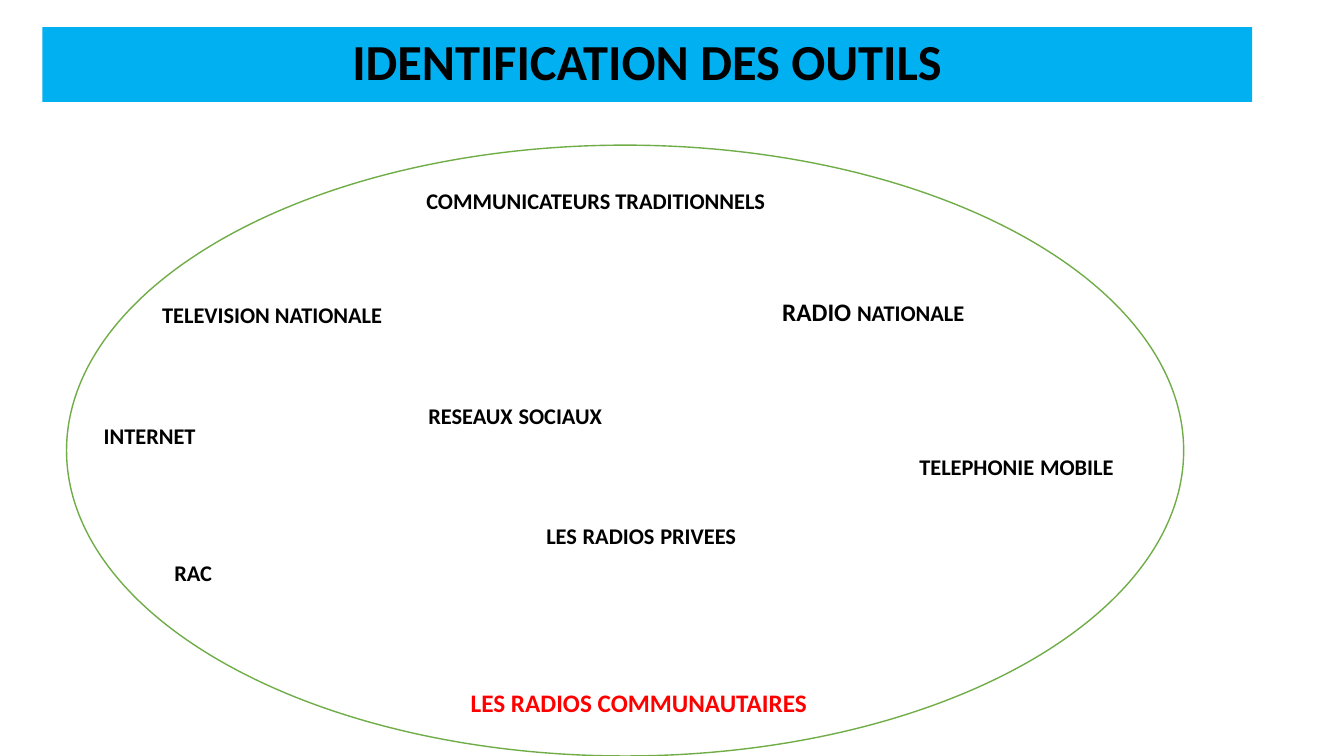
from pptx import Presentation
from pptx.dml.color import RGBColor
from pptx.enum.shapes import MSO_SHAPE
from pptx.enum.text import MSO_ANCHOR, MSO_AUTO_SIZE, PP_ALIGN
from pptx.util import Inches, Pt

BLACK = RGBColor(0x00, 0x00, 0x00)
WHITE = RGBColor(0xFF, 0xFF, 0xFF)
RED = RGBColor(0xFF, 0x00, 0x00)
GREEN = RGBColor(0x70, 0xAD, 0x47)
SKY_BLUE = RGBColor(0x00, 0xB0, 0xF0)

# Grid: ten columns and ten rows to the inch
CELL = Inches(0.1)
LABEL_ROWS, TALL_LABEL_ROWS = 3.7, 4


def on_grid(*cells):
    return [round(count * CELL) for count in cells]


def add_words(paragraph, words, size, color=BLACK, bold=True):
    run = paragraph.add_run()
    run.text = words
    run_format = {"name": "Calibri", "size": Pt(size), "bold": bold}
    for attribute, value in run_format.items():
        setattr(run.font, attribute, value)
    run.font.color.rgb = color


presentation = Presentation()
presentation.slide_width = Inches(13.33)
presentation.slide_height = Inches(7.5)
slide = presentation.slides.add_slide(presentation.slide_layouts[6])

# Title banner
banner = slide.shapes.add_shape(MSO_SHAPE.RECTANGLE, *on_grid(4.2, 2.7, 120, 7.4))
banner.shadow.inherit = False
banner.fill.solid()
banner.fill.fore_color.rgb = SKY_BLUE
banner.line.fill.background()
banner.text_frame.vertical_anchor = MSO_ANCHOR.MIDDLE
heading = banner.text_frame.paragraphs[0]
heading.alignment = PP_ALIGN.CENTER
heading.line_spacing = 0.9
add_words(heading, "IDENTIFICATION DES OUTILS", 36)

# Ellipse around the tools
tool_circle = slide.shapes.add_shape(MSO_SHAPE.OVAL, *on_grid(6.6, 14.4, 110.8, 60.6))
tool_circle.shadow.inherit = False
tool_circle.fill.solid()
tool_circle.fill.fore_color.rgb = WHITE
tool_circle.line.color.rgb = GREEN
tool_circle.line.width = Pt(1)

# Tools: column, row, columns wide, rows high, white fill, (words, size, color, bold)
GAP = (" ", 18, BLACK, False)
tools = [
    (41.3, 18.1, 41.3, LABEL_ROWS, True, [("COMMUNICATEURS TRADITIONNELS", 16)]),
    (45.7, 67.7, 39.6, TALL_LABEL_ROWS, False, [("LES RADIOS COMMUNAUTAIRES", 18, RED)]),
    (9.3, 41.4, 22.8, LABEL_ROWS, False, [("INTERNET", 16)]),
    (90.2, 44.2, 23.3, TALL_LABEL_ROWS, False, [("TELEPHONIE", 16), GAP, ("MOBILE", 16)]),
    (15.1, 29.4, 41.3, LABEL_ROWS, True, [("TELEVISION NATIONALE", 16)]),
    (76.6, 28.9, 26.2, TALL_LABEL_ROWS, False, [("RADIO ", 18), ("NATIONALE", 16)]),
    (16.3, 55, 8.9, LABEL_ROWS, False, [("RAC", 16)]),
    (41.5, 39.1, 23.5, TALL_LABEL_ROWS, False, [("RESEAUX", 16), GAP, ("SOCIAUX", 16)]),
    (53.2, 51, 23.4, TALL_LABEL_ROWS, False,
     [("LES", 16), GAP, ("RADIOS", 16), GAP, ("PRIVEES", 16)]),
]
for column, row, columns, rows, filled, pieces in tools:
    tool = slide.shapes.add_textbox(*on_grid(column, row, columns, rows))
    tool.text_frame.word_wrap = True
    tool.text_frame.auto_size = MSO_AUTO_SIZE.SHAPE_TO_FIT_TEXT
    if filled:
        tool.fill.solid()
        tool.fill.fore_color.rgb = WHITE
    for piece in pieces:
        add_words(tool.text_frame.paragraphs[0], *piece)

presentation.save("out.pptx")
